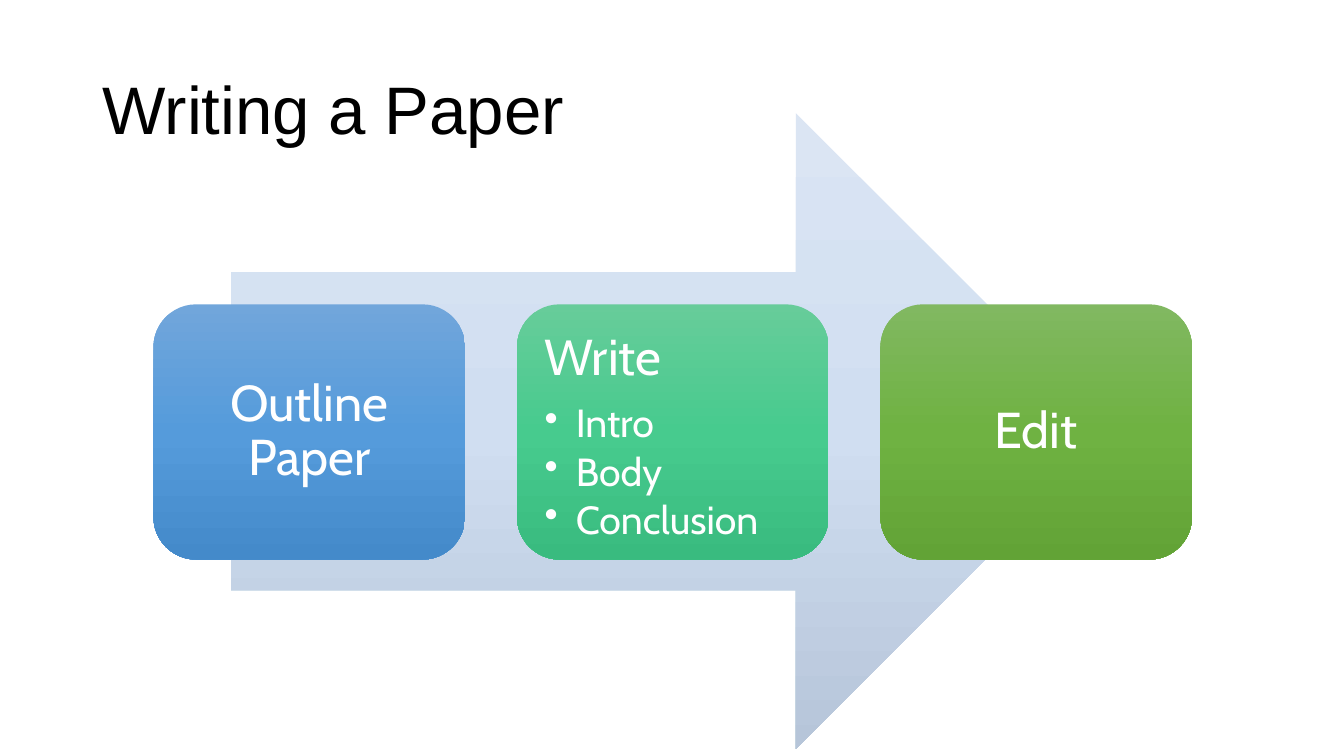
from copy import deepcopy

from lxml.etree import SubElement
from pptx import Presentation
from pptx.dml.color import RGBColor
from pptx.enum.shapes import MSO_SHAPE
from pptx.enum.text import MSO_ANCHOR, PP_ALIGN
from pptx.oxml.ns import qn
from pptx.util import Cm, Pt


def write(paragraph, text, size, font="Cabin", color="FFFFFF",
          align=PP_ALIGN.LEFT, after=0, bullet=False):
    paragraph.alignment = align
    paragraph.line_spacing = 0.9
    paragraph.space_before = Pt(0)
    paragraph.space_after = Pt(after)
    if bullet:
        properties = paragraph._p.get_or_add_pPr()
        properties.set("marL", str(Cm(0.79)))
        properties.set("indent", str(-Cm(0.79)))
        SubElement(properties, qn("a:buChar"), char="•")
    run = paragraph.add_run()
    run.text = text
    run.font.size = Pt(size)
    run.font.name = font
    run.font.color.rgb = RGBColor.from_string(color)


def add_gradient_shape(kind, left, top, width, height, colors):
    """Add a borderless shape shaded from top to bottom through three colours."""
    shape = slide.shapes.add_shape(kind, Cm(left), Cm(top), Cm(width), Cm(height))
    shape.shadow.inherit = False
    shape.line.fill.background()
    shape.fill.gradient()
    shape.fill.gradient_angle = 270
    first = shape.fill.gradient_stops[0]._gs
    first.addnext(deepcopy(first))
    for stop, position, color in zip(shape.fill.gradient_stops, (0, 0.5, 1), colors):
        stop.position = position
        stop.color.rgb = RGBColor.from_string(color)
    return shape


presentation = Presentation()
presentation.slide_width = Cm(33.87)
presentation.slide_height = Cm(19.05)
slide = presentation.slides.add_slide(presentation.slide_layouts[5])

title = slide.shapes.title
title.left, title.top, title.width, title.height = Cm(2.33), Cm(1.01), Cm(29.21), Cm(3.68)
title.text_frame.vertical_anchor = MSO_ANCHOR.MIDDLE
write(title.text_frame.paragraphs[0], "Writing a Paper", 48, font="Arial", color="000000")

add_gradient_shape(MSO_SHAPE.RIGHT_ARROW, 5.82, 2.85, 22.25, 16.03,
                   ("DBE5F3", "D0DEF1", "B6C5D9"))

steps = [
    ("Outline Paper", [], ("71A6DB", "559BDB", "448ACA")),
    ("Write", ["Intro", "Body", "Conclusion"], ("67CC9A", "47CB8E", "39BB7F")),
    ("Edit", [], ("81B861", "6FB242", "62A336")),
]
for index, (heading, parts, colors) in enumerate(steps):
    step = add_gradient_shape(MSO_SHAPE.ROUNDED_RECTANGLE, 3.87 + index * 9.16, 7.67,
                              7.85, 6.43, colors)
    frame = step.text_frame
    frame.word_wrap = True
    frame.margin_left = frame.margin_right = Cm(0.38)
    frame.margin_top = frame.margin_bottom = Cm(0.38)
    frame.vertical_anchor = MSO_ANCHOR.TOP if parts else MSO_ANCHOR.MIDDLE
    write(frame.paragraphs[0], heading, 36, after=12.6 if parts else 0,
          align=PP_ALIGN.LEFT if parts else PP_ALIGN.CENTER)
    for part in parts:
        write(frame.add_paragraph(), part, 28, after=4.2, bullet=True)

presentation.save("out.pptx")
